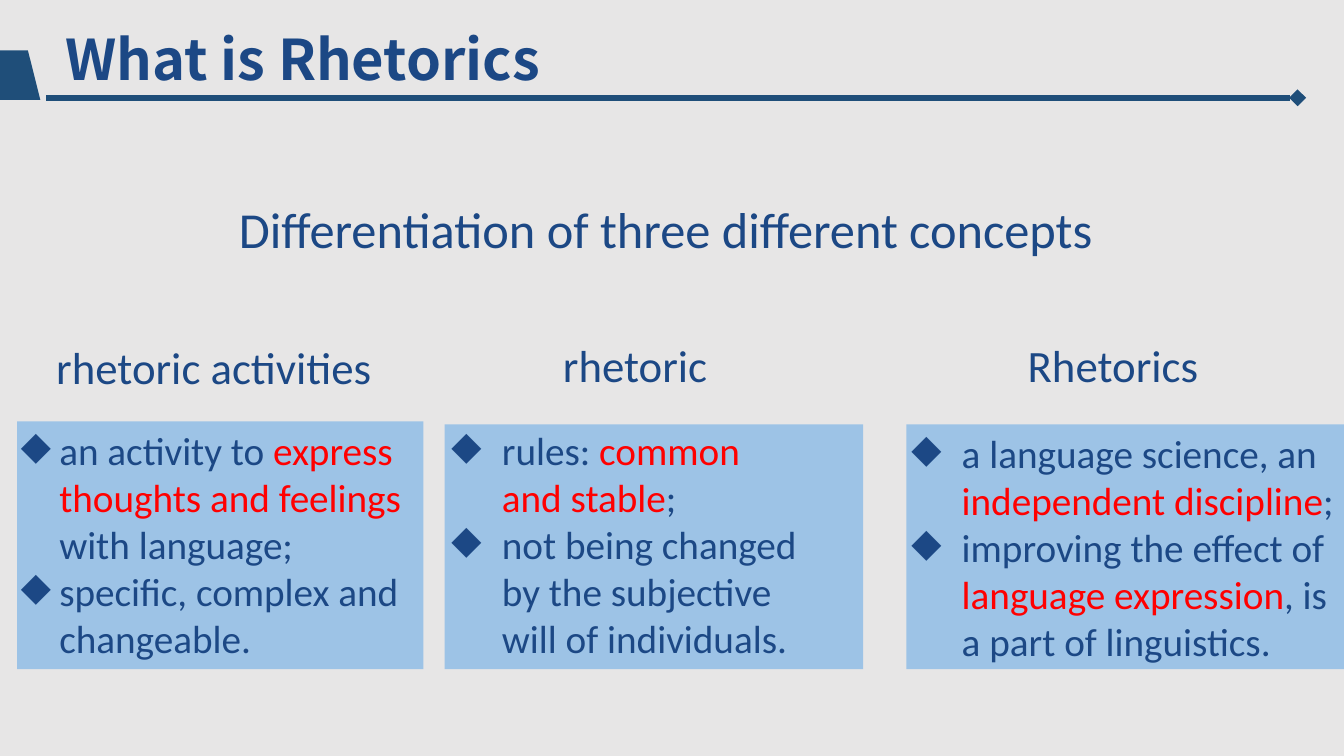
"""Build the slide that compares rhetoric activities, rhetoric and Rhetorics."""
from lxml import etree
from pptx import Presentation
from pptx import util as u
from pptx.dml.color import RGBColor
from pptx.enum import shapes, text
from pptx.oxml.ns import qn

PX = 9144
COLORS = {"bg": "E7E6E6", "bar": "1F4E79", "panel": "9DC3E6", "ink": "1C4885", "key": "FF0000"}


def rgb(name):
    return RGBColor.from_string(COLORS[name])


def add_text(box, paragraphs, size, font="Calibri", bold=False, align=None, inset=True, indent=0):
    tb = s.shapes.add_textbox(*[v * PX for v in box])
    tf = tb.text_frame
    tf.word_wrap = True
    tf.auto_size = text.MSO_AUTO_SIZE.SHAPE_TO_FIT_TEXT
    if not inset:
        tf.margin_left = tf.margin_right = tf.margin_top = tf.margin_bottom = 0
    for i, runs in enumerate(paragraphs):
        p = tf.paragraphs[0] if i == 0 else tf.add_paragraph()
        if align:
            p.alignment = align
        if indent:
            pPr = p._p.get_or_add_pPr()
            pPr.set("marL", str(indent * PX))
            pPr.set("indent", str(-indent * PX))
            etree.SubElement(pPr, qn("a:buChar")).set("char", "◆")
        for words, color in runs:
            r = p.add_run()
            r.text = words
            r.font.name = font
            r.font.size = u.Pt(size)
            r.font.bold = bold
            r.font.color.rgb = rgb(color)


prs = Presentation()
prs.slide_width, prs.slide_height = 1333 * PX, 750 * PX
s = prs.slides.add_slide(prs.slide_layouts[6])
s.background.fill.solid()
s.background.fill.fore_color.rgb = rgb("bg")

RECT = shapes.MSO_SHAPE.RECTANGLE
for kind, box, color in [
    (shapes.MSO_SHAPE.TRAPEZOID, (-14, 50, 54, 49), "bar"),
    (RECT, (17, 418, 403, 246), "panel"),
    (RECT, (441, 421, 415, 243), "panel"),
    (RECT, (899, 421, 434, 243), "panel"),
]:
    sp = s.shapes.add_shape(kind, *[v * PX for v in box])
    sp.shadow.inherit = False
    sp.fill.solid()
    sp.fill.fore_color.rgb = rgb(color)
    sp.line.fill.background()

rule = s.shapes.add_connector(shapes.MSO_CONNECTOR.STRAIGHT, 46 * PX, 97 * PX, 1287 * PX, 97 * PX)
rule.line.color.rgb = rgb("bar")
rule.line.width = u.Pt(4)
etree.SubElement(rule.line._get_or_add_ln(), qn("a:tailEnd")).set("type", "diamond")
etree.SubElement(rule._element.spPr, qn("a:effectLst"))

add_text((55, 19, 674, 77), [[("What is Rhetorics", "ink")]], 40, font="Noto Sans CJK SC", bold=True)
add_text((227, 192, 889, 71), [[("Differentiation of three different concepts", "ink")]], 36)

add_text((46, 332, 374, 64), [[("rhetoric activities", "ink")]], 32)
for left, heading in [(502, "rhetoric"), (976, "Rhetorics")]:
    add_text((left, 335, 256, 54), [[(heading, "ink")]], 32, align=text.PP_ALIGN.CENTER, inset=False)

for box, indent, points in [
    ((11, 418, 406, 246), 38, [
        [("an activity to ", "ink"), ("express thoughts and feelings ", "key"), ("with language;", "ink")],
        [("specific, complex and changeable.", "ink")],
    ]),
    ((438, 418, 366, 246), 50, [
        [("rules: ", "ink"), ("common and stable", "key"), (";", "ink")],
        [("not being changed by the subjective will of individuals.", "ink")],
    ]),
    ((894, 421, 444, 246), 50, [
        [("a language science, an ", "ink"), ("independent discipline", "key"), (";", "ink")],
        [("improving the effect of ", "ink"), ("language expression", "key"),
         (", is a part of linguistics.", "ink")],
    ]),
]:
    add_text(box, points, 28, indent=indent)

prs.save("out.pptx")
